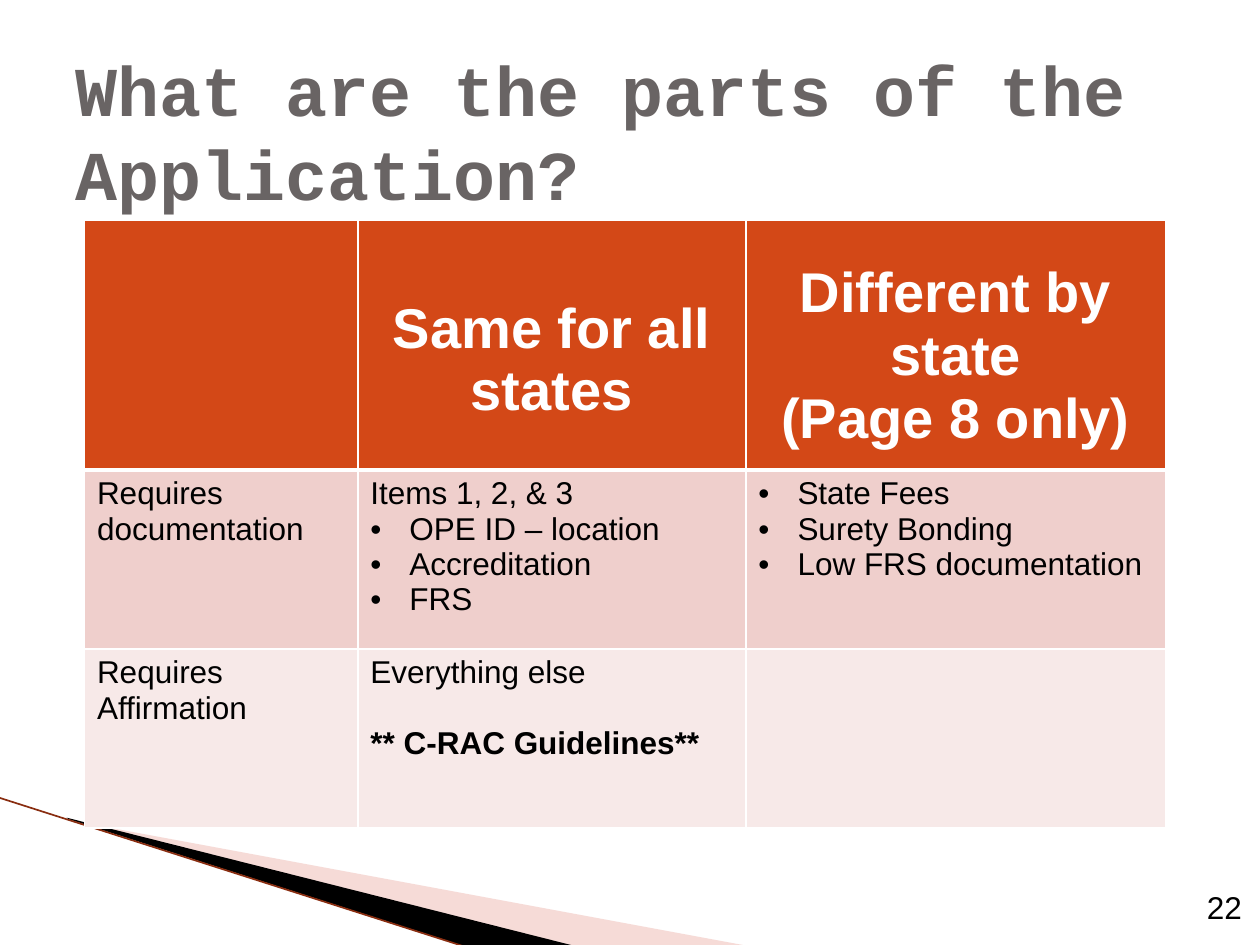
from dataclasses import dataclass

from lxml import etree
from pptx import Presentation
from pptx import util as u
from pptx.dml.color import RGBColor
from pptx.enum import shapes, text
from pptx.oxml import ns


@dataclass(frozen=True)
class Theme:
    title_color: str = "696464"
    header_fill: str = "D34817"
    row_fills: tuple = ("EFCFCC", "F7E9E8")
    pale_wedge: str = "E9A59D"
    edge_line: str = "892D10"
    black: str = "000000"
    white: str = "FFFFFF"
    title_font: str = "Courier New"
    body_font: str = "Arial"
    title_size: int = 40
    header_size: int = 32
    body_size: int = 18


def add_element(parent, tag, **attributes):
    return etree.SubElement(parent, ns.qn(tag), attributes)


class SlideBuilder:
    def __init__(self, slide, theme):
        self.slide = slide
        self.theme = theme

    def add_run(self, paragraph, words, size, color, font=None, bold=False):
        run = paragraph.add_run()
        run.text = words
        run.font.name = font or self.theme.body_font
        run.font.size = u.Pt(size)
        run.font.bold = bold
        run.font.color.rgb = RGBColor.from_string(color)

    def text_box(self, left, top, width, height, wrap=True):
        frame = self.slide.shapes.add_textbox(
            *map(u.Inches, (left, top, width, height))).text_frame
        frame.word_wrap = wrap
        return frame

    def title(self, words):
        frame = self.text_box(0.5, 0.25, 9, 1.25)
        frame.margin_top = u.Inches(0.12)
        paragraph = frame.paragraphs[0]
        paragraph.line_spacing = u.Pt(48)
        self.add_run(paragraph, words, self.theme.title_size,
                     self.theme.title_color, self.theme.title_font, True)

    def page_number(self, number):
        frame = self.text_box(9.48, 7, 0.48, 0.4, wrap=False)
        frame.auto_size = text.MSO_AUTO_SIZE.SHAPE_TO_FIT_TEXT
        self.add_run(frame.paragraphs[0], number, self.theme.body_size,
                     self.theme.black)

    def wedge(self, points, color, opacity=100):
        start, *others = [tuple(map(u.Inches, point)) for point in points]
        builder = self.slide.shapes.build_freeform(*start)
        builder.add_line_segments(others, close=True)
        shape = builder.convert_to_shape()
        shape.shadow.inherit = False
        shape.fill.solid()
        shape.fill.fore_color.rgb = RGBColor.from_string(color)
        shape.line.fill.background()
        if opacity < 100:
            fill_color = shape._element.spPr.find(".//" + ns.qn("a:srgbClr"))
            add_element(fill_color, "a:alpha", val=str(opacity * 1000))

    def line(self, start, end, color, width):
        connector = self.slide.shapes.add_connector(
            shapes.MSO_CONNECTOR.STRAIGHT, *map(u.Inches, start + end))
        connector.line.color.rgb = RGBColor.from_string(color)
        connector.line.width = u.Pt(width)
        add_element(connector._element.spPr, "a:effectLst")

    def table(self, left, top, columns, rows):
        table = self.slide.shapes.add_table(
            len(rows), len(columns), u.Inches(left), u.Inches(top),
            u.Inches(sum(columns)), u.Inches(sum(rows))).table
        for column, width in zip(table.columns, columns):
            column.width = u.Inches(width)
        for row, height in zip(table.rows, rows):
            row.height = u.Inches(height)
        return table

    def style_cell(self, cell, fill, top=1, bottom=1):
        """Set the white borders, widths in points, and then the fill."""
        properties = cell._tc.get_or_add_tcPr()
        for side, width in zip("LRTB", (1, 1, top, bottom)):
            border = add_element(properties, f"a:ln{side}", w=str(u.Pt(width)))
            solid = add_element(border, "a:solidFill")
            add_element(solid, "a:srgbClr", val=self.theme.white)
        cell.fill.solid()
        cell.fill.fore_color.rgb = RGBColor.from_string(fill)

    def paragraphs(self, cell, count):
        frame = cell.text_frame
        for _ in range(count - 1):
            frame.add_paragraph()
        return frame.paragraphs

    def header_cell(self, cell, lines, margin_top):
        self.style_cell(cell, self.theme.header_fill, bottom=3)
        cell.margin_top = u.Inches(margin_top)
        for paragraph, words in zip(self.paragraphs(cell, len(lines)), lines):
            paragraph.alignment = text.PP_ALIGN.CENTER
            self.add_run(paragraph, words, self.theme.header_size,
                         self.theme.white, bold=True)

    def body_cell(self, cell, lines, fill, top):
        """Fill a cell with (words, style) lines: plain, bullet or strong."""
        self.style_cell(cell, fill, top=top)
        for paragraph, (words, style) in zip(
                self.paragraphs(cell, len(lines)), lines):
            if style == "bullet":
                self.bullet(paragraph)
            elif style == "strong":
                paragraph.space_before = u.Pt(20.5)
            self.add_run(paragraph, words, self.theme.body_size,
                         self.theme.black, bold=style == "strong")

    def bullet(self, paragraph):
        indent = u.Inches(0.31)
        properties = paragraph._p.get_or_add_pPr()
        properties.set("marL", str(indent))
        properties.set("indent", str(-indent))
        add_element(properties, "a:buFont", typeface=self.theme.body_font)
        add_element(properties, "a:buChar", char="•")


HEADERS = [
    ([], 0.05),
    (["Same for all states"], 0.61),
    (["Different by state", "(Page 8 only)"], 0.33),
]
BODY = [
    [
        [("Requires documentation", "plain")],
        [("Items 1, 2, & 3", "plain"), ("OPE ID – location", "bullet"),
         ("Accreditation", "bullet"), ("FRS", "bullet")],
        [("State Fees", "bullet"), ("Surety Bonding", "bullet"),
         ("Low FRS documentation", "bullet")],
    ],
    [
        [("Requires Affirmation", "plain")],
        [("Everything else", "plain"), ("** C-RAC Guidelines**", "strong")],
        [],
    ],
]


def main():
    presentation = Presentation()
    presentation.slide_width = u.Inches(10)
    presentation.slide_height = u.Inches(7.5)
    theme = Theme()
    slide = presentation.slides.add_slide(presentation.slide_layouts[6])
    builder = SlideBuilder(slide, theme)

    builder.wedge([(0.55, 6.51), (5.95, 7.51), (4.56, 7.51), (0.55, 6.5)],
                  theme.pale_wedge, opacity=40)
    builder.wedge([(0.53, 6.49), (4.57, 7.51), (3.72, 7.52), (0.54, 6.5)],
                  theme.black)
    builder.line((-0.01, 6.33), (3.71, 7.52), theme.edge_line, 0.95)
    builder.title("What are the parts of the Application?")

    table = builder.table(0.67, 1.75, (2.17, 3.08, 3.33), (1.87, 1.42, 1.42))
    for column, (lines, margin_top) in enumerate(HEADERS):
        builder.header_cell(table.cell(0, column), lines, margin_top)
    for row, (cells, fill) in enumerate(zip(BODY, theme.row_fills), start=1):
        for column, lines in enumerate(cells):
            builder.body_cell(table.cell(row, column), lines, fill,
                              top=3 if row == 1 else 1)

    builder.page_number("22")
    presentation.save("out.pptx")


if __name__ == "__main__":
    main()
